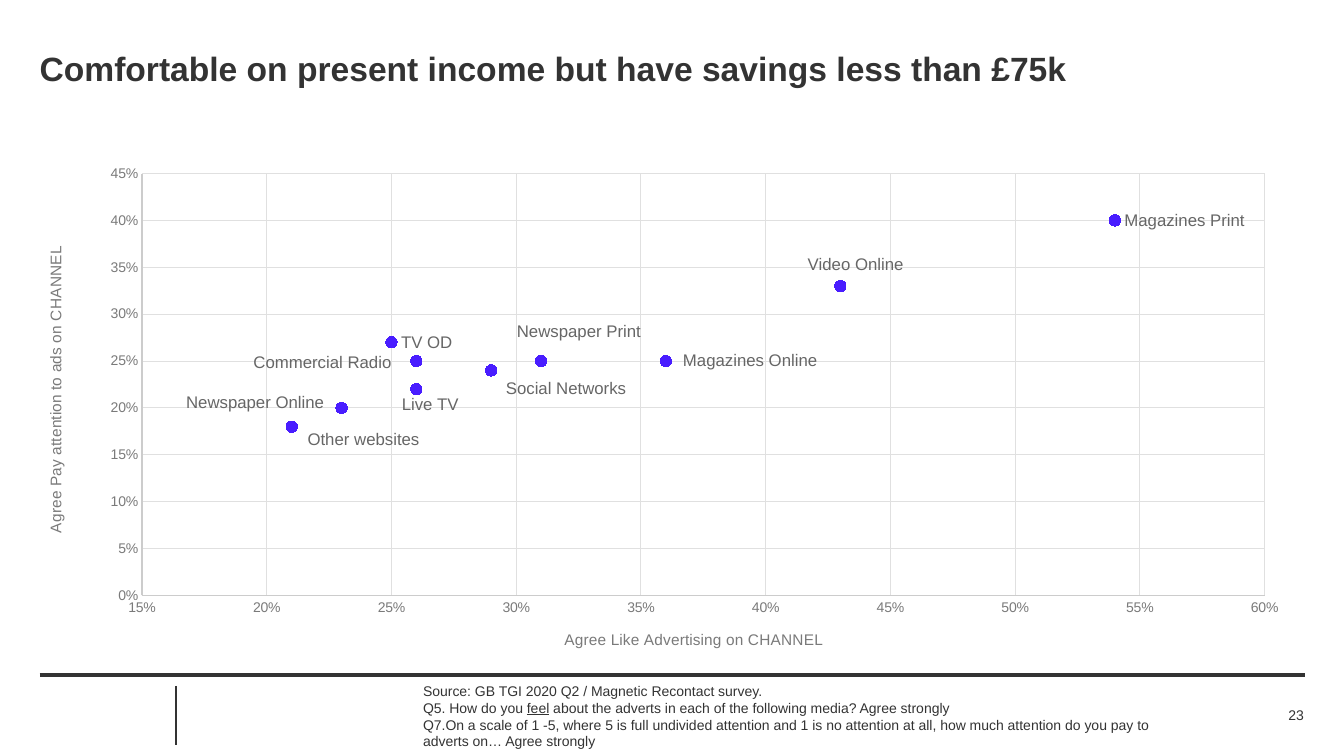
from lxml.etree import SubElement
from pptx import Presentation
from pptx.chart.data import XyChartData
from pptx.dml.color import RGBColor
from pptx.enum.chart import XL_CHART_TYPE, XL_LABEL_POSITION, XL_MARKER_STYLE, XL_TICK_MARK
from pptx.enum.shapes import MSO_CONNECTOR
from pptx.enum.text import MSO_ANCHOR, MSO_AUTO_SIZE, PP_ALIGN
from pptx.oxml import parse_xml
from pptx.oxml.ns import nsdecls, qn
from pptx.util import Pt

INK = "333333"
AXIS_TEXT = "7A7A7A"
AXIS_LINE = "CCCCCC"
GRID = "E0E0E0"
LABEL_TEXT = "666666"
DOT = "491DFF"

RIGHT = XL_LABEL_POSITION.RIGHT
LEFT = XL_LABEL_POSITION.LEFT
ABOVE = XL_LABEL_POSITION.ABOVE
BELOW = XL_LABEL_POSITION.BELOW

CHANNELS = [
    ("Magazines Online", 0.36, 0.25, RIGHT, 0.6, 0),
    ("Live TV", 0.26, 0.22, BELOW, 1.1, -0.6),
    ("TV OD", 0.25, 0.27, RIGHT, 0, 0),
    ("Video Online", 0.43, 0.33, ABOVE, 1.2, -0.6),
    ("Magazines Print", 0.54, 0.4, RIGHT, 0, 0),
    ("Newspaper Print", 0.31, 0.25, ABOVE, 3, -2.1),
    ("Commercial Radio", 0.26, 0.25, LEFT, -1.2, 0.3),
    ("Social Networks", 0.29, 0.24, RIGHT, 0.4, 3.5),
    ("Newspaper Online", 0.23, 0.2, LEFT, -0.6, -1),
    ("Other websites", 0.21, 0.18, RIGHT, 0.5, 2.5),
]

SOURCE_NOTES = [
    [("Source: GB TGI 2020 Q2 / Magnetic Recontact survey.", False)],
    [("Q5. How do you ", False), ("feel", True),
     (" about the adverts in each of the following media? Agree strongly", False)],
    [("Q7.On a scale of 1 -5, where 5 is full undivided attention and 1 is no attention at all, "
      "how much attention do you pay to adverts on… Agree strongly", False)],
]

NO_LEADER_LINES = (
    f'<c:extLst {nsdecls("c")}><c:ext uri="{{CE6537A1-D6FC-4f65-9D91-7224C49458BB}}" '
    'xmlns:c15="http://schemas.microsoft.com/office/drawing/2012/chart">'
    '<c15:showLeaderLines val="0"/></c:ext></c:extLst>'
)


def color(value):
    return RGBColor.from_string(value)


def apply(target, values):
    for name, value in values.items():
        setattr(target, name, value)


def manual_layout(**percents):
    layout = parse_xml(f"<c:layout {nsdecls('c')}><c:manualLayout/></c:layout>")
    for name, value in percents.items():
        text = value if isinstance(value, str) else str(round(value / 100, 4))
        SubElement(layout[0], qn(f"c:{name}")).set("val", text)
    return layout


class SlideBuilder:
    font_name = "Arial"

    def __init__(self, slide):
        self.slide = slide

    def style_font(self, font, size, ink=INK, bold=False):
        apply(font, {"name": self.font_name, "size": Pt(size), "bold": bold})
        font.color.rgb = color(ink)

    def style_line(self, line, ink, width):
        line.color.rgb = color(ink)
        line.width = Pt(width)

    def place(self, shape, left, top, width, height):
        apply(shape, {"left": Pt(left), "top": Pt(top), "width": Pt(width), "height": Pt(height)})
        apply(shape.text_frame, {
            "margin_left": 0, "margin_top": 0, "margin_right": 0, "margin_bottom": 0,
            "word_wrap": True, "auto_size": MSO_AUTO_SIZE.NONE,
            "vertical_anchor": MSO_ANCHOR.MIDDLE,
        })

    def title(self, text, *box):
        shape = self.slide.shapes.title
        self.place(shape, *box)
        shape.text_frame.text = text
        paragraph = shape.text_frame.paragraphs[0]
        paragraph.alignment = PP_ALIGN.LEFT
        self.style_font(paragraph.runs[0].font, 24, bold=True)

    def text(self, paragraphs, *box, alignment=PP_ALIGN.LEFT):
        shape = self.slide.shapes.add_textbox(0, 0, 0, 0)
        self.place(shape, *box)
        for index, runs in enumerate(paragraphs):
            frame = shape.text_frame
            paragraph = frame.add_paragraph() if index else frame.paragraphs[0]
            paragraph.alignment = alignment
            for words, underline in runs:
                run = paragraph.add_run()
                run.text = words
                self.style_font(run.font, 10)
                run.font.underline = underline

    def rule(self, start_x, start_y, end_x, end_y, width):
        connector = self.slide.shapes.add_connector(
            MSO_CONNECTOR.STRAIGHT, Pt(start_x), Pt(start_y), Pt(end_x), Pt(end_y))
        self.style_line(connector.line, INK, width)
        SubElement(connector.line._get_or_add_ln().getparent(), qn("a:effectLst"))

    def axis(self, axis, title, minimum, maximum, title_x, title_y):
        apply(axis, {
            "minimum_scale": minimum, "maximum_scale": maximum, "major_unit": 0.05,
            "major_tick_mark": XL_TICK_MARK.NONE, "minor_tick_mark": XL_TICK_MARK.NONE,
            "has_major_gridlines": True, "has_title": True,
        })
        apply(axis.tick_labels, {"number_format": "0%", "number_format_is_linked": False})
        self.style_font(axis.tick_labels.font, 10, AXIS_TEXT)
        self.style_line(axis.format.line, AXIS_LINE, 0.75)
        self.style_line(axis.major_gridlines.format.line, GRID, 0.75)
        frame = axis.axis_title.text_frame
        frame.text = title
        self.style_font(frame.paragraphs[0].runs[0].font, 11, AXIS_TEXT)
        element = axis.axis_title._element
        for layout in element.findall(qn("c:layout")):
            element.remove(layout)
        element.find(qn("c:tx")).addnext(
            manual_layout(xMode="edge", yMode="edge", x=title_x, y=title_y))

    def point_label(self, point, name, position, shift_x, shift_y):
        label = point.data_label
        label.text_frame.text = name
        self.style_font(label.text_frame.paragraphs[0].runs[0].font, 12, LABEL_TEXT)
        label.position = position
        if shift_x or shift_y:
            element = label._get_or_add_dLbl()
            element.find(qn("c:idx")).addnext(manual_layout(x=shift_x, y=shift_y))

    def scatter(self, channels, left, top, width, height):
        data = XyChartData(number_format="0%")
        points = data.add_series("Series 1")
        for channel in channels:
            points.add_data_point(channel[1], channel[2])
        chart = self.slide.shapes.add_chart(
            XL_CHART_TYPE.XY_SCATTER, Pt(left), Pt(top), Pt(width), Pt(height), data).chart
        apply(chart, {"has_title": False, "has_legend": False})
        self.style_font(chart.font, 10)
        plot = chart.plots[0]
        plot.vary_by_categories = False
        series = plot.series[0]
        series.format.line.fill.background()
        apply(series.marker, {"style": XL_MARKER_STYLE.CIRCLE, "size": 8})
        series.marker.format.fill.solid()
        series.marker.format.fill.fore_color.rgb = color(DOT)
        self.style_line(series.marker.format.line, DOT, 0.75)
        for index, (name, like, attention, *placement) in enumerate(channels):
            self.point_label(series.points[index], name, *placement)
        labels = series._element.find(qn("c:dLbls"))
        for leader_lines in labels.findall(qn("c:showLeaderLines")):
            leader_lines.set("val", "0")
        labels.append(parse_xml(NO_LEADER_LINES))
        self.axis(chart.category_axis, "Agree Like Advertising on CHANNEL", 0.15, 0.6, 41.3, 91.4)
        self.axis(chart.value_axis, "Agree Pay attention to ads on CHANNEL", 0, 0.45, 0.2, 17.1)
        plot_area = chart._chartSpace.chart.plotArea
        for layout in plot_area.findall(qn("c:layout")):
            plot_area.remove(layout)
        plot_area.insert(0, manual_layout(
            layoutTarget="inner", xMode="edge", yMode="edge", x=8.1, y=3.6, w=88.8, h=81.9))


def main():
    presentation = Presentation()
    apply(presentation, {"slide_width": Pt(960), "slide_height": Pt(540)})
    builder = SlideBuilder(presentation.slides.add_slide(presentation.slide_layouts[5]))
    builder.rule(125.8, 490, 125.8, 532, 1)
    builder.rule(28.3, 482, 932, 482, 3)
    builder.title("Comfortable on present income but have savings less than £75k", 28.3, 32.5, 903, 32)
    builder.text(SOURCE_NOTES, 302.2, 503.5, 546, 16)
    builder.scatter(CHANNELS, 28.3, 110.8, 903, 368)
    builder.text([[("23", False)]], 855.3, 503, 76, 16, alignment=PP_ALIGN.RIGHT)
    presentation.save("out.pptx")


if __name__ == "__main__":
    main()
